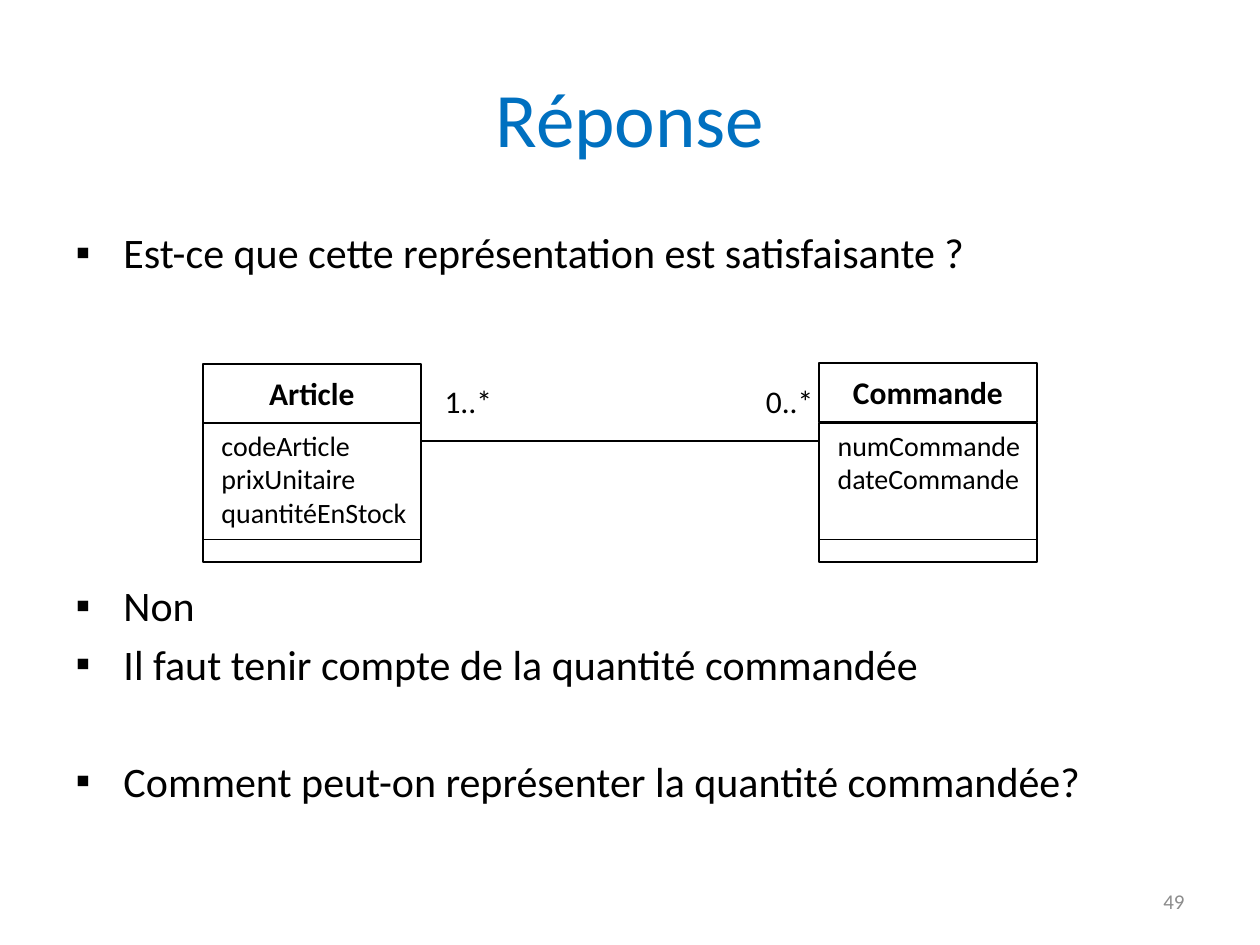
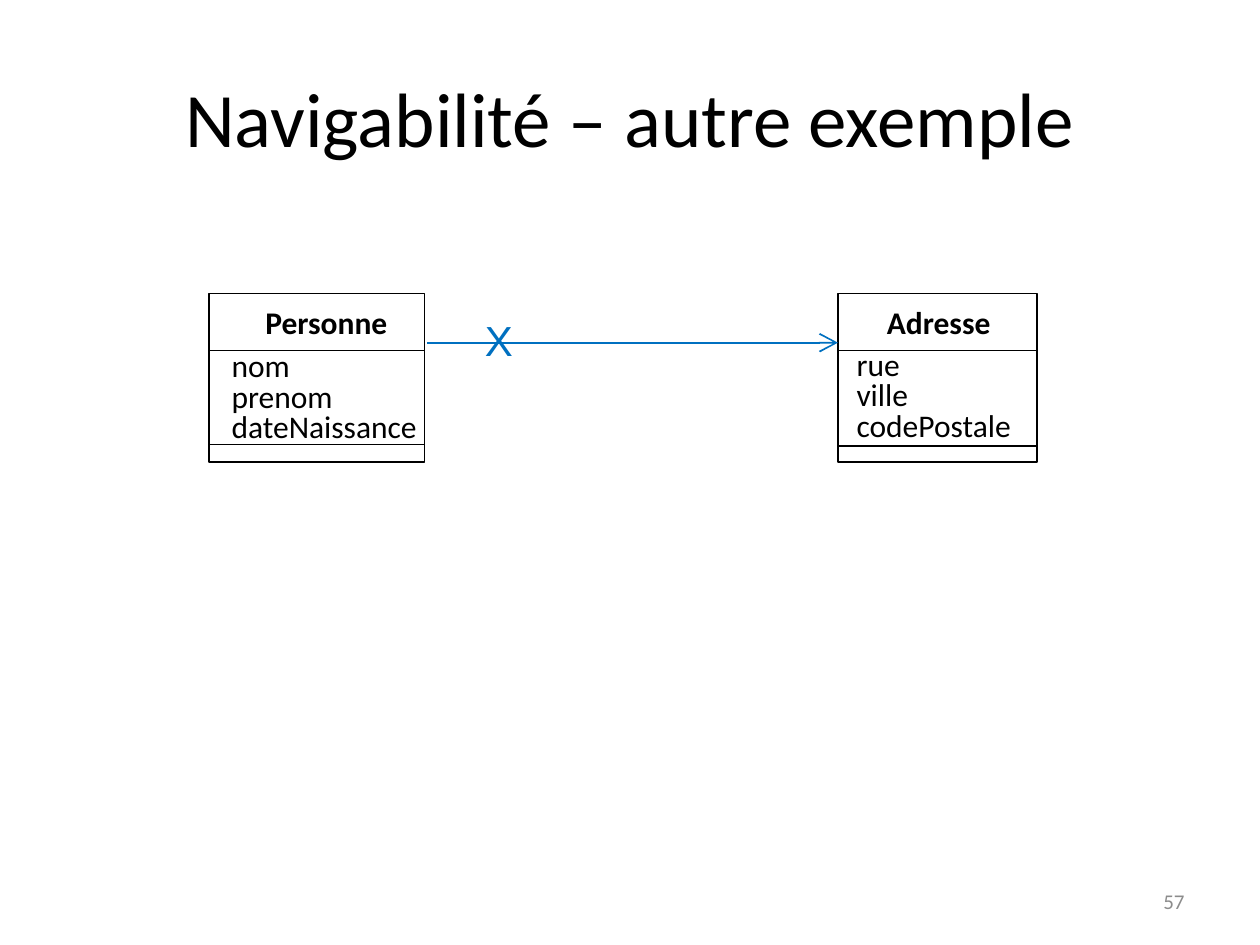
"""Build two slides showing UML class associations."""
from lxml import etree
from pptx import Presentation
from pptx.dml.color import RGBColor
from pptx.enum import shapes, text
from pptx.oxml import ns
from pptx.util import Inches, Pt

BLACK = RGBColor(0x00, 0x00, 0x00)
WHITE = RGBColor(0xFF, 0xFF, 0xFF)
BLUE = RGBColor(0x00, 0x70, 0xC0)
GREY = RGBColor(0x8C, 0x8C, 0x8C)
LEFT, CENTER, RIGHT = text.PP_ALIGN.LEFT, text.PP_ALIGN.CENTER, text.PP_ALIGN.RIGHT
TOP, MIDDLE = text.MSO_ANCHOR.TOP, text.MSO_ANCHOR.MIDDLE

ANSWER = {
    "title": "Réponse",
    "color": BLUE,
    "number": "49",
    "bullets": [
        ("Est-ce que cette représentation\u00a0est satisfaisante ?", 0),
        ("Non", 173),
        ("Il faut tenir compte de la quantité commandée", 4.5),
        ("Comment peut-on représenter la quantité commandée?", 38),
    ],
    "classes": [
        {"name": "Article", "left": 1.61, "top": 2.89,
         "attributes": ["codeArticle", "prixUnitaire", "quantitéEnStock"]},
        {"name": "Commande", "left": 6.5, "top": 2.88,
         "attributes": ["numCommande", "dateCommande"]},
    ],
    "multiplicities": [("1..*", 3.43), ("0..*", 5.98)],
}
NAVIGABILITY = {
    "title": "Navigabilité – autre exemple",
    "color": BLACK,
    "number": "57",
    "classes": [
        {"name": "Personne", "left": 1.66, "width": 1.71, "name_left": 1.92,
         "attributes": ["nom", "prenom", "dateNaissance"],
         "attribute_left": 1.74, "attribute_top": 2.7, "divider": 3.53},
        {"name": "Adresse", "left": 6.65, "width": 1.58, "name_left": 6.78,
         "attributes": ["rue", "ville", "codePostale"],
         "attribute_left": 6.7, "attribute_top": 2.69, "divider": 3.54},
    ],
}
CLASS_WIDTH = 1.73
BODY_TOP, BODY_HEIGHT, OPERATIONS_TOP = 3.36, 1.1, 4.28
FRAME_TOP, FRAME_HEIGHT, NAME_BOTTOM = 2.33, 1.34, 2.78
ATTRIBUTE_WIDTH, ATTRIBUTE_PITCH = 1.8, 0.24


def place(box, left, top, width, height):
    box.left, box.top = Inches(left), Inches(top)
    box.width, box.height = Inches(width), Inches(height)


def write(box, lines, size=18, color=BLACK, bold=False, font="Calibri",
          align=LEFT, anchor=TOP):
    frame = box.text_frame
    frame.word_wrap = True
    frame.vertical_anchor = anchor
    frame.text = "\n".join(lines)
    for para in frame.paragraphs:
        para.alignment = align
        for span in para.runs:
            span.font.size = Pt(size)
            span.font.name = font
            span.font.bold = bold
            span.font.color.rgb = color


def add_text(page, lines, left, top, width, height=0.4, **style):
    box = page.shapes.add_textbox(*map(Inches, (left, top, width, height)))
    write(box, lines, **style)


def add_rectangle(page, left, top, width, height, fill=None):
    box = page.shapes.add_shape(shapes.MSO_SHAPE.RECTANGLE,
                                *map(Inches, (left, top, width, height)))
    box.shadow.inherit = False
    if fill is None:
        box.fill.background()
    else:
        box.fill.solid()
        box.fill.fore_color.rgb = fill
    box.line.color.rgb = BLACK
    box.line.width = Pt(1)


def add_line(page, left, right, y, color=BLACK, width=0.75, arrow=False):
    line = page.shapes.add_connector(shapes.MSO_CONNECTOR.STRAIGHT,
                                     *map(Inches, (left, y, right, y)))
    line.line.color.rgb = color
    line.line.width = Pt(width)
    if arrow:
        etree.SubElement(line.line._get_or_add_ln(), ns.qn("a:tailEnd"),
                         type="arrow", w="lg", len="lg")
    etree.SubElement(line._element.spPr, ns.qn("a:effectLst"))


def add_bullets(box, bullets):
    place(box, 0.5, 1.75, 9.3, 4.99)
    write(box, [line for line, _ in bullets], size=24)
    box.text_frame.auto_size = text.MSO_AUTO_SIZE.NONE
    for para, (_, space) in zip(box.text_frame.paragraphs, bullets):
        properties = para._p.get_or_add_pPr()
        properties.set("marL", str(Inches(0.38)))
        properties.set("indent", str(-Inches(0.38)))
        etree.SubElement(properties, ns.qn("a:buFont"), typeface="Arial")
        etree.SubElement(properties, ns.qn("a:buChar"), char="▪")
        para.space_before = Pt(space)


def start_page(deck, layout, content):
    page = deck.slides.add_slide(deck.slide_layouts[layout])
    place(page.shapes.title, 0.5, 0.3, 9, 1.25)
    write(page.shapes.title, [content["title"]], size=44, color=content["color"],
          align=CENTER, anchor=MIDDLE)
    add_text(page, [content["number"]], 7.17, 6.95, 2.33, size=12, color=GREY,
             align=RIGHT, anchor=MIDDLE)
    return page


def build_answer(deck):
    page = start_page(deck, 1, ANSWER)
    add_bullets(page.placeholders[1], ANSWER["bullets"])
    add_line(page, 3.35, 6.51, 3.5)
    for item in ANSWER["classes"]:
        left, top = item["left"], item["top"]
        add_rectangle(page, left, top, CLASS_WIDTH, 0.47)
        add_rectangle(page, left, BODY_TOP, CLASS_WIDTH, BODY_HEIGHT)
        add_text(page, [item["name"]], left, top + 0.03, CLASS_WIDTH,
                 bold=True, align=CENTER)
        add_text(page, item["attributes"], left + 0.05, 3.35, CLASS_WIDTH,
                 0.1 + 0.27 * len(item["attributes"]), size=16)
        add_line(page, left, left + CLASS_WIDTH, OPERATIONS_TOP)
    for label, left in ANSWER["multiplicities"]:
        add_text(page, [label], left, 2.98, 0.63)


def build_navigability(deck):
    page = start_page(deck, 5, NAVIGABILITY)
    for item in NAVIGABILITY["classes"]:
        left, width = item["left"], item["width"]
        add_rectangle(page, left, FRAME_TOP, width, FRAME_HEIGHT, fill=WHITE)
        add_text(page, [item["name"]], item["name_left"], 2.36, 1.34,
                 bold=True, align=CENTER)
        for y in (NAME_BOTTOM, item["divider"]):
            add_line(page, left, left + width, y)
        for row, attribute in enumerate(item["attributes"]):
            add_text(page, [attribute], item["attribute_left"],
                     item["attribute_top"] + row * ATTRIBUTE_PITCH, ATTRIBUTE_WIDTH)
    add_line(page, 3.39, 6.65, 2.72, color=BLUE, width=1, arrow=True)
    add_text(page, ["X"], 3.75, 2.45, 0.44, 0.5, size=24, color=BLUE, font="Arial")


def main():
    deck = Presentation()
    deck.slide_width, deck.slide_height = Inches(10), Inches(7.5)
    build_answer(deck)
    build_navigability(deck)
    deck.save("out.pptx")


if __name__ == "__main__":
    main()
